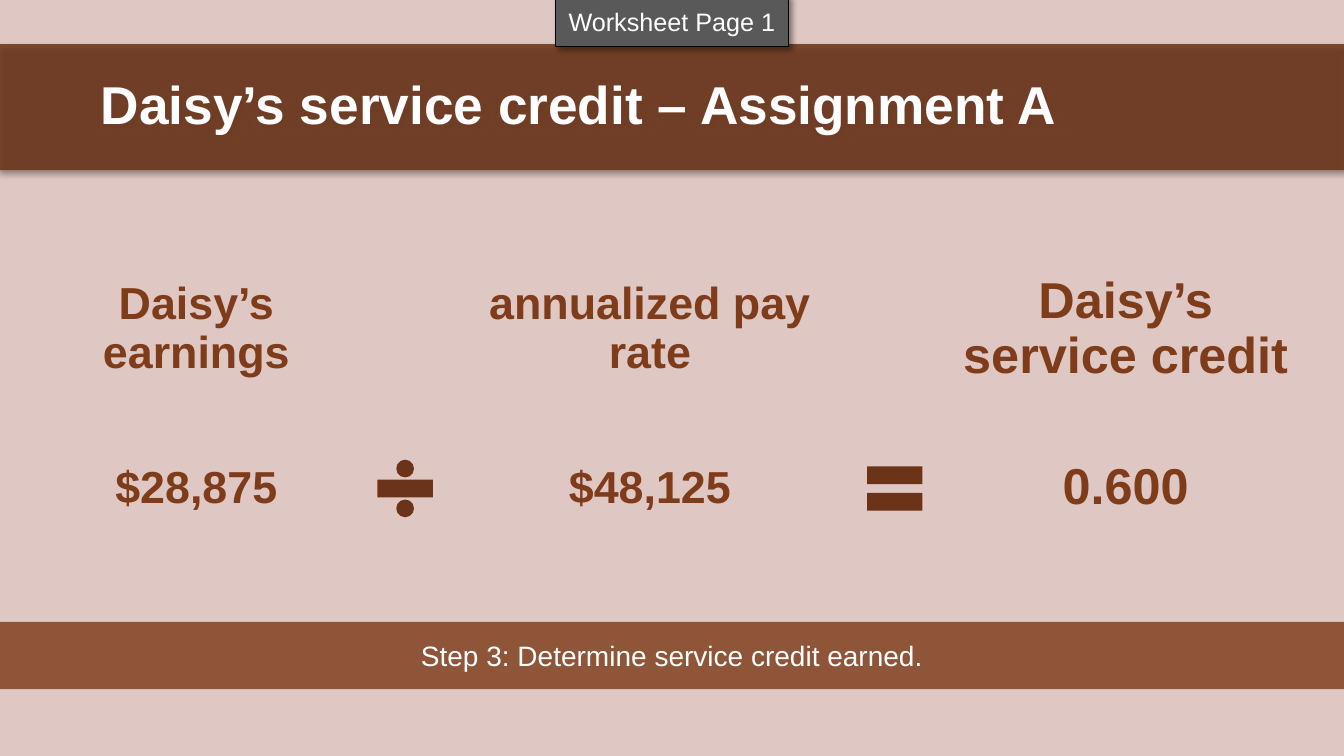
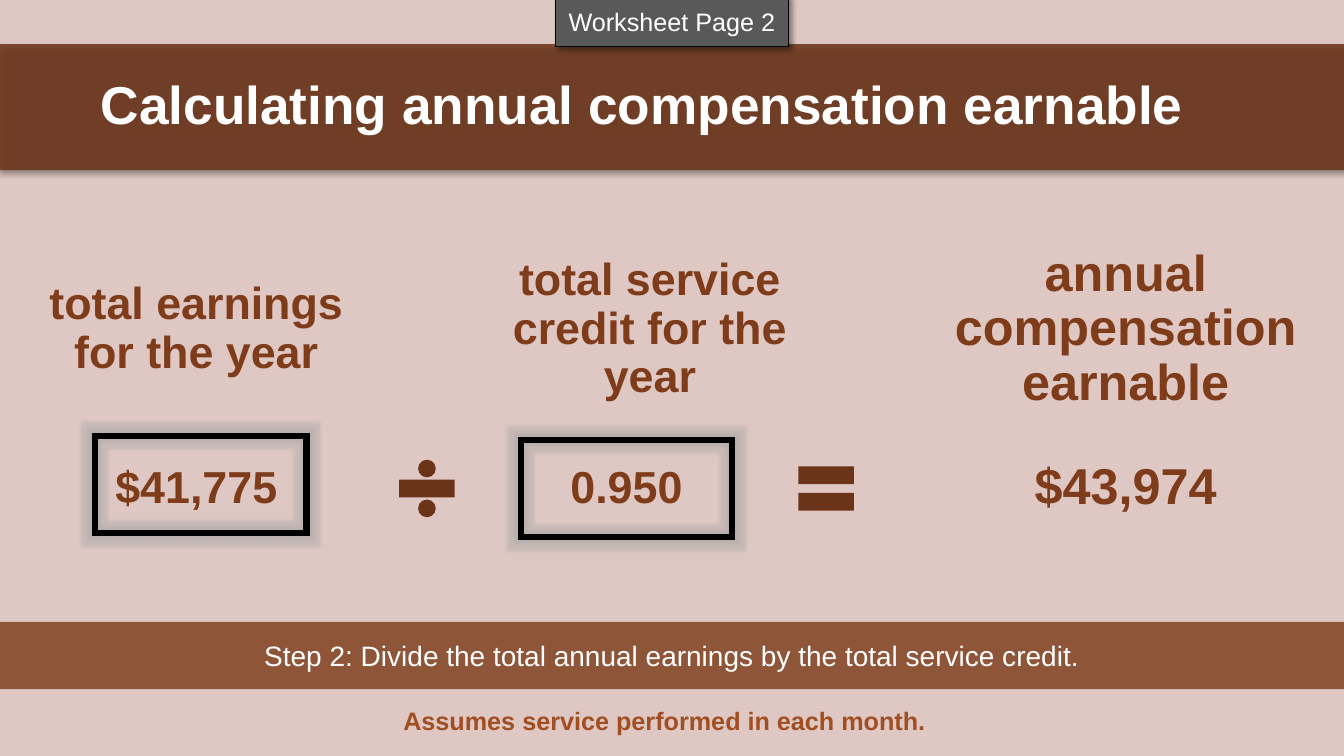
import dataclasses
import typing

import pptx
import pptx.dml.color
import pptx.enum.shapes
import pptx.enum.text
import pptx.oxml
import pptx.oxml.ns
import pptx.util
from pptx.util import Cm

Align = pptx.enum.text.PP_ALIGN
Anchor = pptx.enum.text.MSO_ANCHOR
Preset = pptx.enum.shapes.MSO_SHAPE


@dataclasses.dataclass(frozen=True)
class Theme:
    font: str = "Arial"
    background: str = "DCC2BC"
    dark_brown: str = "6B3317"
    brown: str = "7E3C1B"
    light_brown: str = "A04E22"
    tag_gray: str = "595959"
    glow_gray: str = "A5A5A5"
    white: str = "FFFFFF"
    black: str = "000000"
    title_size: int = 38
    result_size: int = 36
    term_size: int = 32
    step_size: int = 20
    small_size: int = 18


THEME = Theme()


@dataclasses.dataclass(frozen=True)
class Term:
    """One column of an equation; lengths are in centimetres."""
    label: str
    value: str
    center: float
    width: float = 9.65
    size: int = THEME.term_size
    value_center: typing.Optional[float] = None
    value_width: typing.Optional[float] = None


def rgb(color):
    return pptx.dml.color.RGBColor.from_string(color)


def write_text(shape, text, *, size, color, bold=False, align=Align.CENTER,
               spacing=1.0, margins=(0.25, 0.13), left_margin=None):
    """Fill the shape with one formatted paragraph; margins are in centimetres."""
    frame = shape.text_frame
    frame.word_wrap = True
    frame.auto_size = pptx.enum.text.MSO_AUTO_SIZE.NONE
    frame.vertical_anchor = Anchor.MIDDLE
    side, edge = margins
    frame.margin_left = Cm(side if left_margin is None else left_margin)
    frame.margin_right = Cm(side)
    frame.margin_top = frame.margin_bottom = Cm(edge)
    paragraph = frame.paragraphs[0]
    paragraph.alignment = align
    paragraph.line_spacing = spacing
    run = paragraph.add_run()
    run.text = text
    run.font.name = THEME.font
    run.font.size = pptx.util.Pt(size)
    run.font.bold = bold
    run.font.color.rgb = rgb(color)


def append_xml(parent, tag, attributes="", content=""):
    parent.append(pptx.oxml.parse_xml(
        f'<a:{tag} {pptx.oxml.ns.nsdecls("a")} {attributes}>{content}</a:{tag}>'))


def paint(shape, fill=None, opacity=100, line=None, line_width=1):
    """Set fill and outline, and remove the inherited shadow."""
    shape.shadow.inherit = False
    if fill:
        shape.fill.solid()
        shape.fill.fore_color.rgb = rgb(fill)
        if opacity < 100:
            color = shape.element.spPr.xpath("./a:solidFill/a:srgbClr")[0]
            append_xml(color, "alpha", f'val="{opacity * 1000}"')
    else:
        shape.fill.background()
    if line:
        shape.line.color.rgb = rgb(line)
        shape.line.width = pptx.util.Pt(line_width)
        append_xml(shape.element.spPr.xpath("./a:ln")[0], "miter", 'lim="800000"')
    else:
        shape.line.fill.background()


def add_effect(shape, name, attributes, color):
    """Add a 40 percent opaque glow or shadow to a painted shape."""
    append_xml(shape.element.spPr.xpath("./a:effectLst")[0], name, attributes,
               f'<a:srgbClr val="{color}"><a:alpha val="40000"/></a:srgbClr>')


def add_shadow(shape):
    add_effect(shape, "outerShdw", 'blurRad="50800" dist="38100" dir="2700000" '
               'algn="tl" rotWithShape="0"', THEME.black)


class Deck:
    """The presentation, its style and the slide being built."""

    def __init__(self):
        self.presentation = pptx.Presentation()
        self.presentation.slide_width = Cm(33.87)
        self.presentation.slide_height = Cm(19.05)
        self.slide = None

    def start_slide(self, title, step, page):
        layout = self.presentation.slide_layouts.get_by_name("Title Only")
        self.slide = self.presentation.slides.add_slide(layout)
        self.backdrop()
        self.title(title)
        self.step_band(step)
        self.page_tag(page)

    def shape(self, preset, left, top, width, height, **style):
        shape = self.slide.shapes.add_shape(
            preset, Cm(left), Cm(top), Cm(width), Cm(height))
        paint(shape, **style)
        return shape

    def backdrop(self):
        """Tint the slide behind its title."""
        backdrop = self.shape(Preset.RECTANGLE, 0, 0, 33.87, 19.2,
                              fill=THEME.background, opacity=89)
        self.slide.shapes.title.element.addprevious(backdrop.element)

    def title(self, text):
        title = self.slide.shapes.title
        title.left, title.top = Cm(-0.1), Cm(1.11)
        title.width, title.height = Cm(33.97), Cm(3.18)
        paint(title, fill=THEME.dark_brown, opacity=85)
        add_shadow(title)
        write_text(title, text, size=THEME.title_size, color=THEME.white, bold=True,
                   align=Align.LEFT, spacing=0.9, left_margin=2.64)

    def step_band(self, text):
        band = self.shape(Preset.RECTANGLE, 0, 15.67, 33.87, 1.7,
                          fill=THEME.brown, opacity=82)
        write_text(band, text, size=THEME.step_size, color=THEME.white)

    def page_tag(self, page):
        tag = self.shape(Preset.RECTANGLE, 14, -0.1, 5.87, 1.27,
                         fill=THEME.tag_gray, line=THEME.black)
        add_shadow(tag)
        write_text(tag, f"Worksheet Page {page}", size=THEME.small_size,
                   color=THEME.white)

    def cell(self, text, center, top, width, size):
        """Draw an unfilled outline that holds one part of an equation."""
        left, right = Cm(center - width / 2), Cm(center + width / 2)
        top, bottom = Cm(top), Cm(top + 3.43)
        builder = self.slide.shapes.build_freeform(left, top)
        builder.add_line_segments([(right, top), (right, bottom), (left, bottom)])
        cell = builder.convert_to_shape()
        paint(cell)
        write_text(cell, text, size=size, color=THEME.brown, bold=True,
                   spacing=0.9, margins=(0.36, 0.25))

    def equation(self, terms, divide_left, equal_left):
        for term in terms:
            self.cell(term.label, term.center, 6.59, term.width, term.size)
            self.cell(term.value, term.value_center or term.center, 10.6,
                      term.value_width or term.width, term.size)
        divide, _ = [self.shape(preset, left, 11.36, 1.9, 1.9, fill=THEME.dark_brown)
                     for preset, left in ((Preset.MATH_DIVIDE, divide_left),
                                          (Preset.MATH_EQUAL, equal_left))]
        divide.adjustments[1] = 0.03

    def frame(self, center, top):
        width = 5.33
        frame = self.shape(Preset.RECTANGLE, center - width / 2, top, width, 2.46,
                           line=THEME.black, line_width=4.5)
        add_effect(frame, "glow", 'rad="63500"', THEME.glow_gray)

    def note(self, text):
        box = self.slide.shapes.add_textbox(Cm(8.2), Cm(17.73), Cm(17.09), Cm(0.94))
        write_text(box, text, size=THEME.small_size, color=THEME.light_brown,
                   bold=True, spacing=0.9)


def main():
    deck = Deck()
    first, middle, last = 4.95, 16.38, 28.37

    deck.start_slide("Daisy’s service credit – Assignment A",
                     "Step 3: Determine service credit earned.", 1)
    deck.equation([
        Term("Daisy’s earnings", "$28,875", first, width=8.53),
        Term("annualized pay rate", "$48,125", middle, width=10.46),
        Term("Daisy’s service credit", "0.600", last, size=THEME.result_size),
    ], divide_left=9.26, equal_left=21.6)

    deck.start_slide(
        "Calculating annual compensation earnable",
        "Step 2: Divide the total annual earnings by the total service credit.", 2)
    deck.equation([
        Term("total earnings for the year", "$41,775", first, width=8.53,
             value_width=6.12),
        Term("total service credit for the year", "0.950", middle,
             value_center=15.79, value_width=4.57),
        Term("annual compensation earnable", "$43,974", last,
             size=THEME.result_size),
    ], divide_left=9.81, equal_left=19.87)
    deck.frame(5.06, 10.98)
    deck.frame(15.79, 11.08)
    deck.note("Assumes service performed in each month.")

    deck.presentation.save("out.pptx")


if __name__ == "__main__":
    main()
